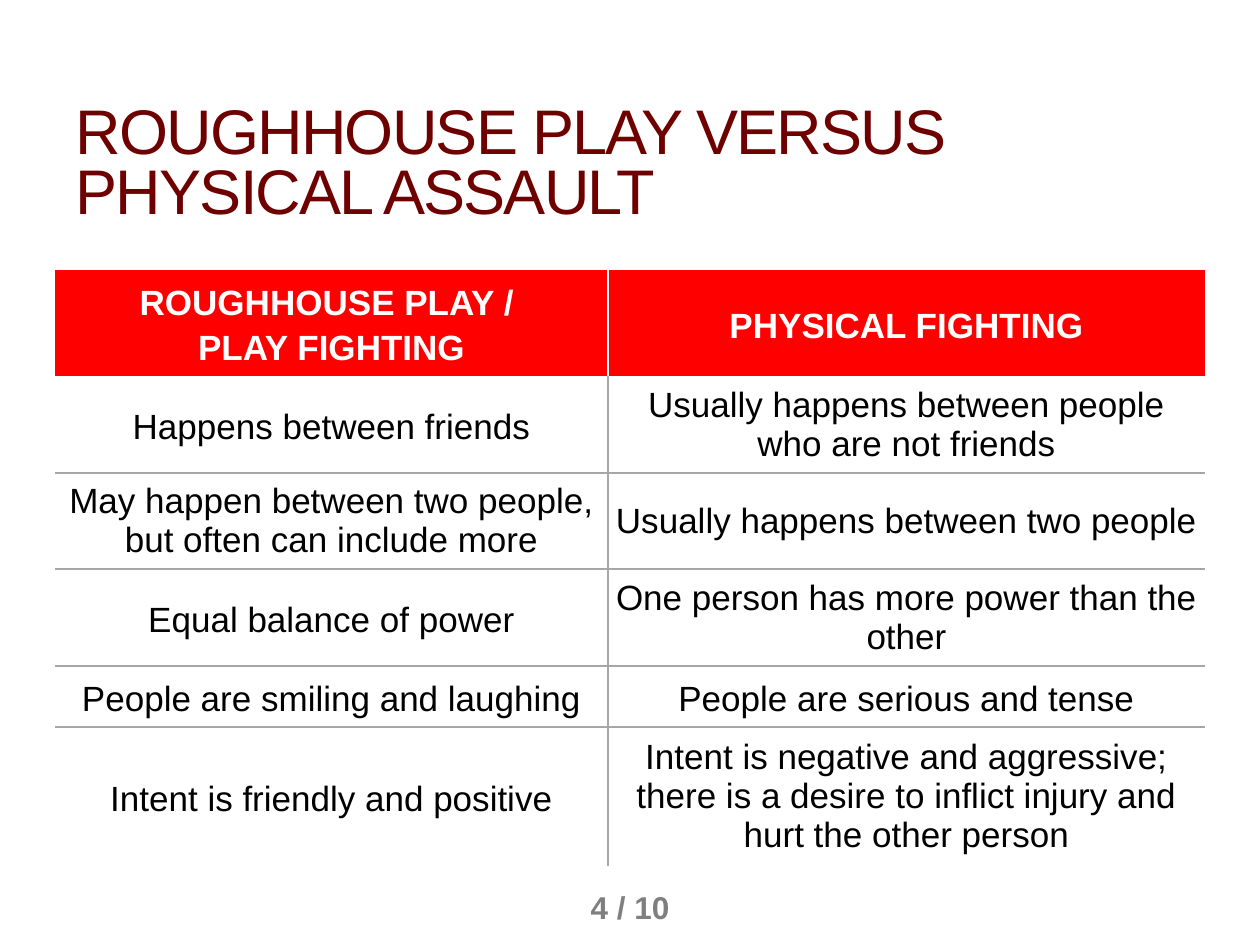
from lxml.etree import SubElement
from pptx import Presentation
from pptx.dml.color import RGBColor
from pptx.enum.text import MSO_ANCHOR as Anchor, MSO_AUTO_SIZE as AutoSize, PP_ALIGN as Align
from pptx.oxml.ns import qn
from pptx.util import Emu, Pt

PX_PER_INCH = 126
COLORS = {
    "title": "6E0000",
    "header": "FF0000",
    "white": "FFFFFF",
    "body": "000000",
    "rule": "A6A6A6",
    "number": "7F7F7F",
}
COLUMN_WIDTHS = [553, 597]
ROW_HEIGHTS = [106, 97, 96, 97, 61, 139]
ROWS = [
    ("ROUGHHOUSE PLAY / \nPLAY FIGHTING", "PHYSICAL FIGHTING"),
    ("Happens between friends", "Usually happens between people who are not friends"),
    ("May happen between two people, but often can include more",
     "Usually happens between two people"),
    ("Equal balance of power", "One person has more power than the other"),
    ("People are smiling and laughing", "People are serious and tense"),
    ("Intent is friendly and positive",
     "Intent is negative and aggressive; there is a desire to inflict injury and hurt the other person"),
]
SINGLE_SPACED = {(1, 1), (2, 0), (2, 1), (3, 1), (5, 1)}


def px(length):
    return Emu(round(length * 914400 / PX_PER_INCH))


def write(frame, text, size=20, color="body", bold=False, align=Align.CENTER,
          line=1.0, after=0, tracking=None):
    frame.word_wrap = True
    lines = text.split("\n")
    for index, words in enumerate(lines):
        para = frame.paragraphs[0] if index == 0 else frame.add_paragraph()
        para.alignment = align
        para.line_spacing = line
        para.space_before = Pt(0)
        para.space_after = Pt(after if index == len(lines) - 1 else 0)
        span = para.add_run()
        span.text = words
        span.font.name = "Arial"
        span.font.size = Pt(size)
        span.font.bold = bold
        span.font.color.rgb = RGBColor.from_string(COLORS[color])
        if tracking is not None:
            span.font._element.set("spc", str(tracking * 100))


def set_borders(cell, colors):
    properties = cell._tc.get_or_add_tcPr()
    for side in "LRTB":
        border = SubElement(properties, qn(f"a:ln{side}"), w=str(Pt(1)))
        if side in colors:
            fill = SubElement(border, qn("a:solidFill"))
            SubElement(fill, qn("a:srgbClr"), val=COLORS[colors[side]])
        else:
            SubElement(border, qn("a:noFill"))


def add_title(page, left, top, width, height):
    title = page.shapes.title
    title.left, title.top, title.width, title.height = map(px, (left, top, width, height))
    frame = title.text_frame
    frame.auto_size = AutoSize.NONE
    frame.vertical_anchor = Anchor.BOTTOM
    write(frame, "ROUGHHOUSE PLAY VERSUS PHYSICAL ASSAULT", size=36, color="title",
          align=Align.LEFT, line=0.8, tracking=-1)


def format_cell(cell, row, column, text):
    header = row == 0
    borders = {"R" if column == 0 else "L": "white" if header else "rule"}
    if row > 1:
        borders["T"] = "rule"
    if 0 < row < len(ROWS) - 1:
        borders["B"] = "rule"
    set_borders(cell, borders)
    if header:
        cell.fill.solid()
        cell.fill.fore_color.rgb = RGBColor.from_string(COLORS["header"])
    else:
        cell.fill.background()
    cell.vertical_anchor = Anchor.MIDDLE
    cell.margin_left = cell.margin_right = px(12 if header else 6)
    cell.margin_top = cell.margin_bottom = px(0 if header else 6)
    write(cell.text_frame, text, color="white" if header else "body", bold=header,
          line=1.0 if (row, column) in SINGLE_SPACED else 1.15, after=6)


def add_comparison(page, left, top):
    frame = page.shapes.add_table(len(ROWS), len(COLUMN_WIDTHS), px(left), px(top),
                                  px(sum(COLUMN_WIDTHS)), px(sum(ROW_HEIGHTS)))
    table = frame.table
    table.horz_banding = False
    for column, width in zip(table.columns, COLUMN_WIDTHS):
        column.width = px(width)
    for row, height in zip(table.rows, ROW_HEIGHTS):
        row.height = px(height)
    for row, texts in enumerate(ROWS):
        for column, text in enumerate(texts):
            format_cell(table.cell(row, column), row, column, text)


def add_page_number(page, left, top, width, height):
    box = page.shapes.add_textbox(*map(px, (left, top, width, height)))
    write(box.text_frame, "4 / 10", size=18, color="number", bold=True)


def main():
    deck = Presentation()
    deck.slide_width, deck.slide_height = px(1260), px(945)
    page = deck.slides.add_slide(deck.slide_layouts[5])
    add_title(page, 63, 94, 1149, 139)
    add_comparison(page, 55, 270)
    add_page_number(page, 567, 882, 126, 50)
    deck.save("out.pptx")


if __name__ == "__main__":
    main()
